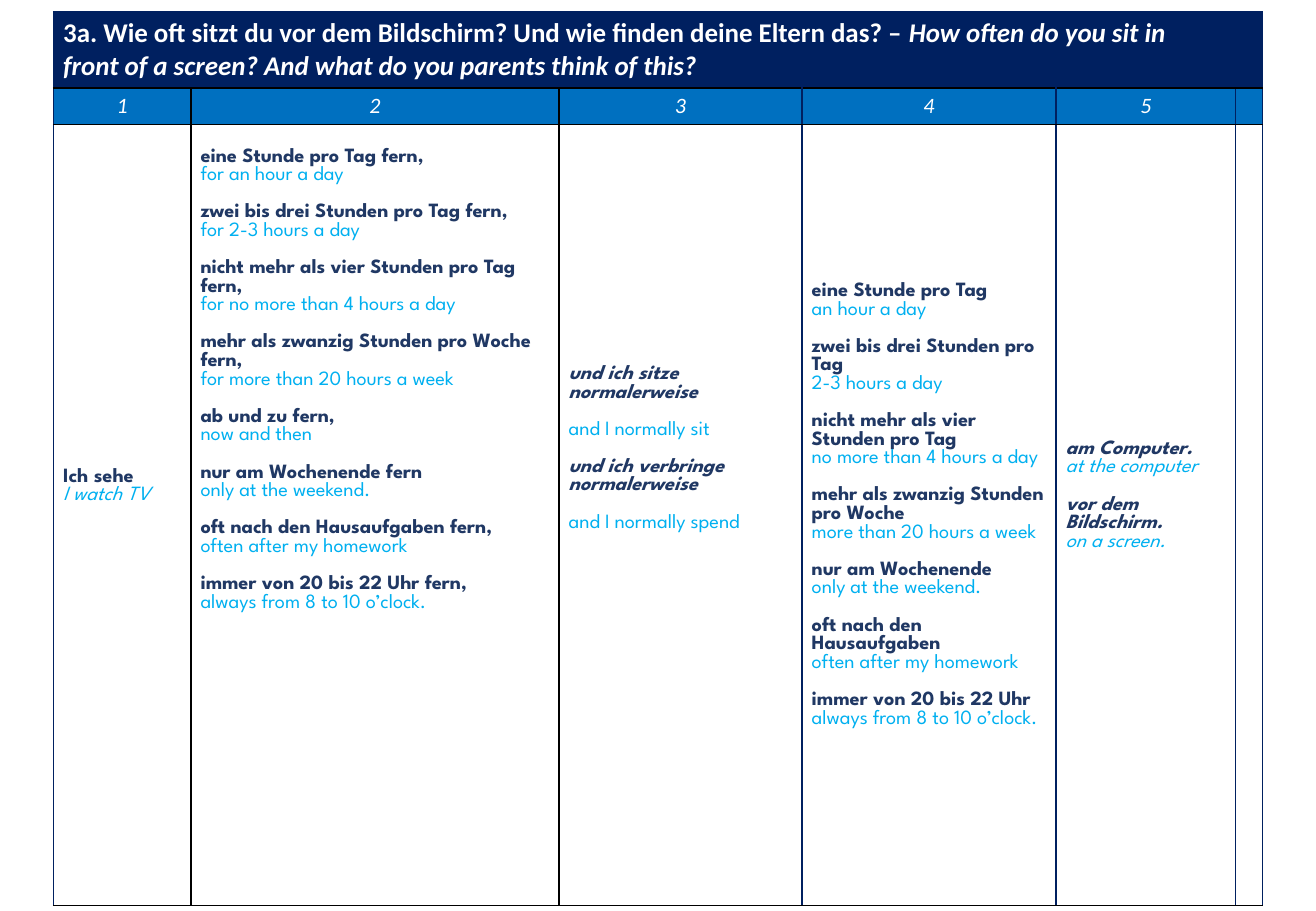
import lxml.etree
import pptx
import pptx.dml.color
import pptx.enum.text
import pptx.oxml.ns
import pptx.util

RGBColor = pptx.dml.color.RGBColor
Inches, Pt = pptx.util.Inches, pptx.util.Pt
PP_ALIGN = pptx.enum.text.PP_ALIGN
MSO_ANCHOR = pptx.enum.text.MSO_ANCHOR

NAVY = RGBColor(0x00, 0x20, 0x60)
BLUE = RGBColor(0x00, 0x70, 0xC0)
GERMAN = RGBColor(0x20, 0x38, 0x64)
ENGLISH = RGBColor(0x00, 0xB0, 0xF0)
BLACK = RGBColor(0, 0, 0)
WHITE = RGBColor(0xFF, 0xFF, 0xFF)

COLUMNS = [1.13, 3.03, 2, 2.09, 1.48, 0.22]
ROWS = [0.62, 0.3, 6.43]
EDGES = [NAVY, BLACK, BLACK, NAVY, NAVY, NAVY, NAVY]
LINE = 0.155
GAP = Pt(11)

QUESTION = "3a. Wie oft sitzt du vor dem Bildschirm? Und wie finden deine Eltern das? – "
QUESTION_ENGLISH = "How often do you sit in front of a screen? And what do you parents think of this?"

WATCHING = [
    ("eine Stunde pro Tag fern,", "for an hour a day"),
    ("zwei bis drei Stunden pro Tag fern,", "for 2-3 hours a day"),
    ("nicht mehr als vier Stunden pro Tag fern,", "for no more than 4 hours a day"),
    ("mehr als zwanzig Stunden pro Woche fern,", "for more than 20 hours a week"),
    ("ab und zu fern,", "now and then"),
    ("nur am Wochenende fern", "only at the weekend."),
    ("oft nach den Hausaufgaben fern,", "often after my homework"),
    ("immer von 20 bis 22 Uhr fern,", "always from 8 to 10 o’clock."),
]
SITTING = [
    ("und ich sitze normalerweise", "and I normally sit"),
    ("und ich verbringe normalerweise", "and I normally spend"),
]
DURATION = [
    ("eine Stunde pro Tag", "an hour a day"),
    ("zwei bis drei Stunden pro Tag", "2-3 hours a day"),
    ("nicht mehr als vier Stunden pro Tag", "no more than 4 hours a day"),
    ("mehr als zwanzig Stunden pro Woche", "more than 20 hours a week"),
    ("nur am Wochenende", "only at the weekend."),
    ("oft nach den Hausaufgaben", "often after my homework"),
    ("immer von 20 bis 22 Uhr", "always from 8 to 10 o’clock."),
]
PLACE = [("am Computer.", "at the computer"), ("vor dem Bildschirm.", "on a screen.")]


def style_cell(cell, fill, borders, above=0.0, below=0.0):
    """Give a cell its borders (left, right, top, bottom), fill and insets."""
    properties = cell._tc.get_or_add_tcPr()
    for side, color in zip("LRTB", borders):
        line = lxml.etree.SubElement(
            properties, pptx.oxml.ns.qn("a:ln" + side), w=str(Pt(1)))
        solid = lxml.etree.SubElement(line, pptx.oxml.ns.qn("a:solidFill"))
        lxml.etree.SubElement(solid, pptx.oxml.ns.qn("a:srgbClr"), val=str(color))
    cell.fill.solid()
    cell.fill.fore_color.rgb = fill
    cell.margin_left = cell.margin_right = Inches(0.08)
    cell.margin_top, cell.margin_bottom = Inches(0.04 + above), Inches(0.04 + below)


def style_run(run, font, size, color, bold=False, italic=False):
    """Format one run."""
    run.font.name, run.font.size = font, Pt(size)
    run.font.color.rgb = color
    run.font.bold, run.font.italic = bold, italic


def fill_title(table):
    """Write the question across the first row."""
    for column in range(len(COLUMNS)):
        style_cell(table.cell(0, column), NAVY, (NAVY, NAVY, NAVY, BLACK))
    title = table.cell(0, 0)
    title.merge(table.cell(0, 4))
    title.vertical_anchor = MSO_ANCHOR.MIDDLE
    paragraph = title.text_frame.paragraphs[0]
    for text, italic in ((QUESTION, False), (QUESTION_ENGLISH, True)):
        run = paragraph.add_run()
        run.text = text
        style_run(run, "Calibri", 16, WHITE, True, italic)


def fill_numbers(table):
    """Number the columns, leaving the last one empty."""
    for column in range(len(COLUMNS)):
        cell = table.cell(1, column)
        style_cell(cell, BLUE, (EDGES[column], EDGES[column + 1], BLACK, BLACK))
        paragraph = cell.text_frame.paragraphs[0]
        paragraph.alignment = PP_ALIGN.CENTER
        if column < 5:
            paragraph.text = str(column + 1)
            style_run(paragraph.runs[0], "Calibri", 13, WHITE, italic=True)
        else:
            lxml.etree.SubElement(
                paragraph._p, pptx.oxml.ns.qn("a:endParaRPr"), sz="1200")


def fill_phrases(table, column, phrases, german_italic=False, english_italic=False,
                 spread=False, lines_above=0, lines_below=0, anchor=MSO_ANCHOR.MIDDLE):
    """Write German phrases with their translations into a column's body cell."""
    cell = table.cell(2, column)
    style_cell(cell, WHITE, (EDGES[column], EDGES[column + 1], BLACK, BLACK),
               lines_above * LINE, lines_below * LINE)
    cell.vertical_anchor = anchor
    frame = cell.text_frame
    for index, (german, english) in enumerate(phrases):
        paragraph = frame.add_paragraph() if index else frame.paragraphs[0]
        paragraph.text = german
        if index:
            paragraph.space_before = GAP
        style_run(paragraph.runs[0], "League Spartan", 12, GERMAN, True, german_italic)
        translation = frame.add_paragraph()
        translation.text = english
        if spread:
            translation.space_before = GAP
        style_run(translation.runs[0], "League Spartan", 12, ENGLISH, False, english_italic)


def build_phrase_table(slide, left, top):
    """Place the sentence-builder table at the given corner."""
    table = slide.shapes.add_table(
        len(ROWS), len(COLUMNS), Inches(left), Inches(top),
        Inches(sum(COLUMNS)), Inches(sum(ROWS))).table
    table.first_row = table.horz_banding = False
    for column, width in zip(table.columns, COLUMNS):
        column.width = Inches(width)
    for row, height in zip(table.rows, ROWS):
        row.height = Inches(height)
    fill_title(table)
    fill_numbers(table)
    fill_phrases(table, 0, [("Ich sehe", "I watch TV")], english_italic=True, lines_below=3)
    fill_phrases(table, 1, WATCHING, lines_above=1, anchor=MSO_ANCHOR.TOP)
    fill_phrases(table, 2, SITTING, german_italic=True, spread=True, lines_below=7)
    fill_phrases(table, 3, DURATION, lines_above=1, lines_below=2)
    fill_phrases(table, 4, PLACE, german_italic=True, english_italic=True, lines_below=2)
    fill_phrases(table, 5, [])


def main():
    """Build the slide and save it."""
    presentation = pptx.Presentation()
    presentation.slide_width, presentation.slide_height = Inches(10.83), Inches(7.5)
    slide = presentation.slides.add_slide(presentation.slide_layouts[6])
    build_phrase_table(slide, 0.44, 0.1)
    presentation.save("out.pptx")


if __name__ == "__main__":
    main()
